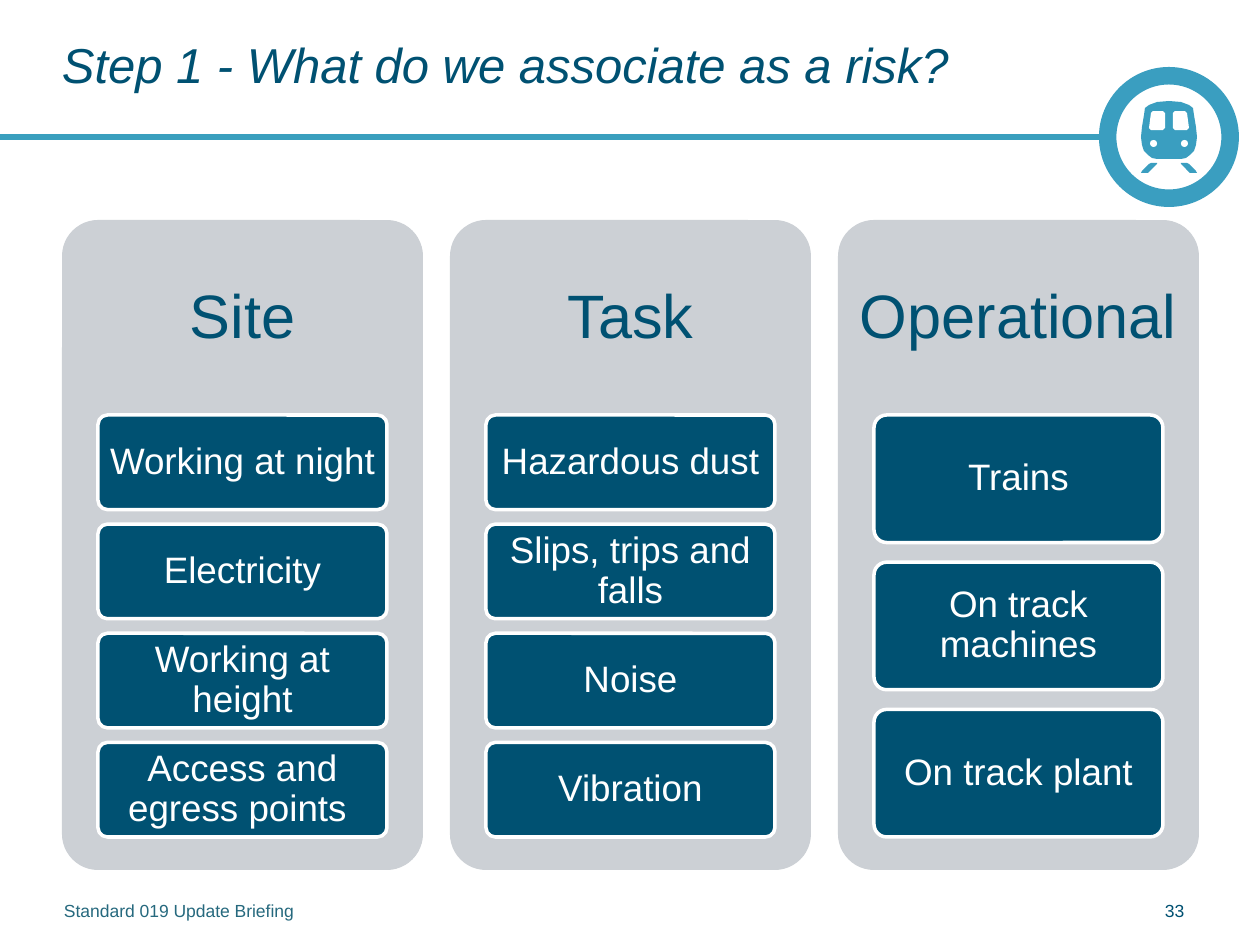
from dataclasses import dataclass
from lxml.etree import SubElement
from pptx import Presentation
from pptx.dml.color import RGBColor
from pptx.enum.shapes import MSO_CONNECTOR, MSO_SHAPE
from pptx.enum.text import MSO_ANCHOR, PP_ALIGN
from pptx.oxml.ns import qn
from pptx.util import Emu, Pt


@dataclass(frozen=True)
class Theme:
    font: str = "Arial"
    navy: str = "005172"
    blue: str = "3A9EC0"
    rule: str = "3A9FBE"
    grey: str = "CCD0D5"
    white: str = "FFFFFF"
    foot: str = "26697E"
    title: int = 28
    head: int = 35
    item: int = 21
    small: int = 10


THEME = Theme()
SCALE = 914400 / 126
GROUPS = [
    ("Site", ["Working at night", "Electricity", "Working at height",
              "Access and egress points "]),
    ("Task", ["Hazardous dust", "Slips, trips and falls", "Noise", "Vibration"]),
    ("Operational", ["Trains", "On track machines", "On track plant"]),
]


def px(value):
    return Emu(round(value * SCALE))


def color(code):
    return RGBColor.from_string(code)


def write(shape, text, size, code, pads=(0, 0, 0, 0), align=PP_ALIGN.LEFT,
          anchor=MSO_ANCHOR.TOP, space=1.0, italic=False):
    frame = shape.text_frame
    frame.word_wrap = True
    frame.vertical_anchor = anchor
    frame.margin_left, frame.margin_top, frame.margin_right, frame.margin_bottom = map(px, pads)
    para = frame.paragraphs[0]
    para.text = text
    para.alignment = align
    para.line_spacing = space
    font = para.font
    font.name, font.size, font.italic = THEME.font, Pt(size), italic
    font.color.rgb = color(code)


def paint(shape, fill, line=None):
    shape.shadow.inherit = False
    shape.fill.solid()
    shape.fill.fore_color.rgb = color(fill)
    if line:
        shape.line.color.rgb = color(line)
        shape.line.width = Pt(2)
    else:
        shape.line.fill.background()


def block(slide, kind, box, fill, line=None, adjust=None):
    shape = slide.shapes.add_shape(kind, *map(px, box))
    if adjust is not None:
        shape.adjustments[0] = adjust
    paint(shape, fill, line)
    return shape


def label(slide, box, text, size, code, **style):
    write(slide.shapes.add_textbox(*map(px, box)), text, size, code, **style)


def outline(slide, left, top, points, fill):
    spots = [(px(left + x), px(top + y)) for x, y in points]
    draft = slide.shapes.build_freeform(*spots[0])
    draft.add_line_segments(spots[1:])
    paint(draft.convert_to_shape(), fill)


def badge(slide, left, top, size):
    def flip(points):
        return [(size - x, y) for x, y in points]

    block(slide, MSO_SHAPE.DONUT, (left, top, size, size), THEME.blue, adjust=0.125)
    half = [(70, 34), (58, 35), (50, 38), (46, 41), (45, 48), (43, 60), (42, 70),
            (43, 78), (45, 84), (49, 88), (53, 91), (58, 92), (70, 92)]
    outline(slide, left, top, half + flip(half[::-1]), THEME.blue)
    pane = [(54, 44), (64, 44), (66, 46), (66, 61), (64, 63), (52, 63), (50, 61), (52, 46)]
    rail = [(52, 96), (58, 96), (58, 97), (49, 106), (42, 106), (43, 104), (50, 97)]
    for points, fill in ((pane, THEME.white), (rail, THEME.blue)):
        outline(slide, left, top, points, fill)
        outline(slide, left, top, flip(points), fill)
    for x in (51, size - 58):
        block(slide, MSO_SHAPE.OVAL, (left + x, top + 73, 7, 7), THEME.white)


def header(slide, left, top, width, height):
    level = top + 112
    rule = slide.shapes.add_connector(
        MSO_CONNECTOR.STRAIGHT, px(0), px(level), px(1106), px(level))
    rule.line.color.rgb = color(THEME.rule)
    rule.line.width = Pt(3)
    SubElement(rule._element.spPr, qn("a:effectLst"))
    badge(slide, 1099, level - 70, 140)
    label(slide, (left, top, width, height), "Step 1 - What do we associate as a risk?",
          THEME.title, THEME.navy, anchor=MSO_ANCHOR.MIDDLE, space=0.85, italic=True)


def card(slide, left, top, width, height, head, items):
    style = dict(align=PP_ALIGN.CENTER, anchor=MSO_ANCHOR.MIDDLE, space=0.9)
    panel = block(slide, MSO_SHAPE.ROUNDED_RECTANGLE, (left, top, width, height),
                  THEME.grey, adjust=0.1)
    write(panel, head, THEME.head, THEME.navy, pads=(9, 9, 9, 462), **style)
    inset, first, total = width // 10, 195, 422
    ratio = 2 / 13
    tall = total / (len(items) + (len(items) - 1) * ratio)
    for row, text in enumerate(items):
        box = (left + inset, top + first + row * tall * (1 + ratio), width - 2 * inset, tall)
        tile = block(slide, MSO_SHAPE.ROUNDED_RECTANGLE, box, THEME.navy, THEME.white, 0.1)
        write(tile, text, THEME.item, THEME.white, pads=(7, 6, 7, 6), **style)


def cards(slide, left, top, width, height):
    gap = 27
    wide = (width - gap * (len(GROUPS) - 1)) / len(GROUPS)
    for col, (head, items) in enumerate(GROUPS):
        card(slide, left + col * (wide + gap), top, wide, height, head, items)


def footer(slide, left, top, width, height):
    label(slide, (left + width - 62, top, 62, height), "33", THEME.small, THEME.navy)
    label(slide, (left, top, width - 73, height), "Standard 019 Update Briefing",
          THEME.small, THEME.foot)


def main():
    deck = Presentation()
    deck.slide_width, deck.slide_height = px(1260), px(945)
    slide = deck.slides.add_slide(deck.slide_layouts[6])
    header(slide, 62, 25, 998, 88)
    cards(slide, 62, 220, 1137, 650)
    footer(slide, 64, 900, 1163, 30)
    deck.save("out.pptx")


if __name__ == "__main__":
    main()
